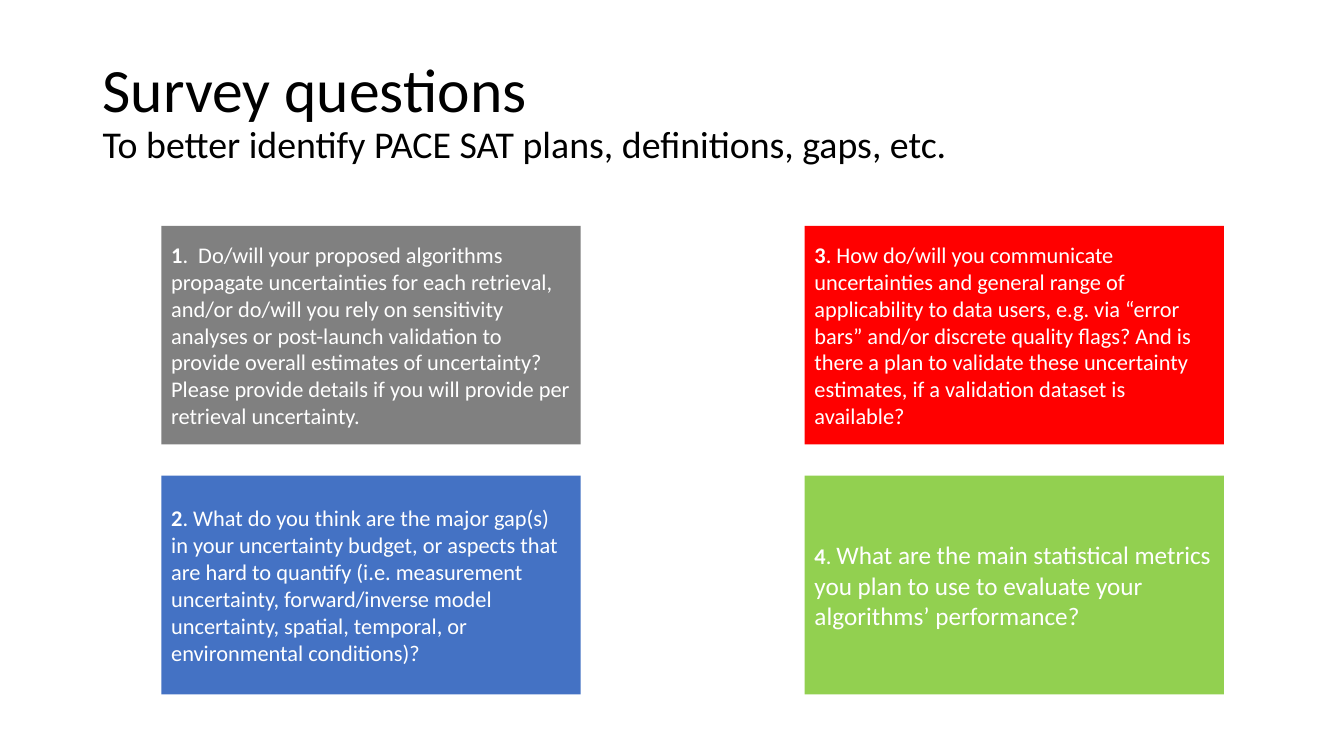
from pptx import Presentation
from pptx.dml.color import RGBColor
from pptx.enum.shapes import MSO_SHAPE as SHAPE
from pptx.enum.text import MSO_ANCHOR as ANCHOR, PP_ALIGN as ALIGN
from pptx.util import Inches, Pt

FONT = "Calibri"
BLACK = RGBColor(0x00, 0x00, 0x00)
WHITE = RGBColor(0xFF, 0xFF, 0xFF)
GRAY = RGBColor(0x80, 0x80, 0x80)
BLUE = RGBColor(0x44, 0x72, 0xC4)
RED = RGBColor(0xFF, 0x00, 0x00)
GREEN = RGBColor(0x92, 0xD0, 0x50)

# Questions run down the left column, then down the right: fill, text, size
QUESTIONS = [
    (GRAY, ".  Do/will your proposed algorithms propagate uncertainties for each "
           "retrieval, and/or do/will you rely on sensitivity analyses or post-launch "
           "validation to provide overall estimates of uncertainty? Please provide "
           "details if you will provide per retrieval uncertainty.", 16),
    (BLUE, ". What do you think are the major gap(s) in your uncertainty budget, or "
           "aspects that are hard to quantify (i.e. measurement uncertainty, "
           "forward/inverse model uncertainty, spatial, temporal, or environmental "
           "conditions)?", 16),
    (RED, ". How do/will you communicate uncertainties and general range of "
          "applicability to data users, e.g. via “error bars” and/or discrete quality "
          "flags? And is there a plan to validate these uncertainty estimates, if a "
          "validation dataset is available?", 16),
    (GREEN, "What are the main statistical metrics you plan to use to evaluate your "
            "algorithms’ performance?", 18),
]


def add_run(p, text, size, color, bold=False):
    r = p.add_run()
    r.text = text
    r.font.name = FONT
    r.font.size = Pt(size)
    r.font.bold = bold
    r.font.color.rgb = color


def add_title(s, left, top, width, height):
    sp = s.shapes.add_textbox(Inches(left), Inches(top), Inches(width), Inches(height))
    tf = sp.text_frame
    tf.word_wrap = True
    tf.vertical_anchor = ANCHOR.MIDDLE
    p = tf.paragraphs[0]
    p.line_spacing = 0.9
    add_run(p, "Survey questions", 44, BLACK)
    p.add_line_break()
    add_run(p, "To better identify PACE SAT plans, definitions, gaps, etc.", 27, BLACK)


def add_question(s, left, top, width, height, number, fill, text, size):
    sp = s.shapes.add_shape(SHAPE.RECTANGLE, Inches(left), Inches(top),
                            Inches(width), Inches(height))
    sp.shadow.inherit = False
    sp.fill.solid()
    sp.fill.fore_color.rgb = fill
    sp.line.fill.background()
    tf = sp.text_frame
    tf.word_wrap = True
    tf.vertical_anchor = ANCHOR.MIDDLE
    p = tf.paragraphs[0]
    p.alignment = ALIGN.LEFT
    add_run(p, str(number), 16, WHITE, bold=True)
    if size != 16:  # larger wording keeps the small number and dot
        add_run(p, ". ", 16, WHITE)
    add_run(p, text, size, WHITE)


def add_question_grid(s, left, top, width, height):
    box_w, box_h = 4.16, 2.17
    for i, (fill, text, size) in enumerate(QUESTIONS):
        col, row = divmod(i, 2)
        add_question(s, left + col * (width - box_w), top + row * (height - box_h),
                     box_w, box_h, i + 1, fill, text, size)


def main():
    prs = Presentation()
    prs.slide_width, prs.slide_height = Inches(13.33), Inches(7.5)
    s = prs.slides.add_slide(prs.slide_layouts[6])
    add_title(s, 0.92, 0.4, 11.5, 1.45)
    add_question_grid(s, 1.6, 2.24, 10.54, 4.65)
    prs.save("out.pptx")


if __name__ == "__main__":
    main()
